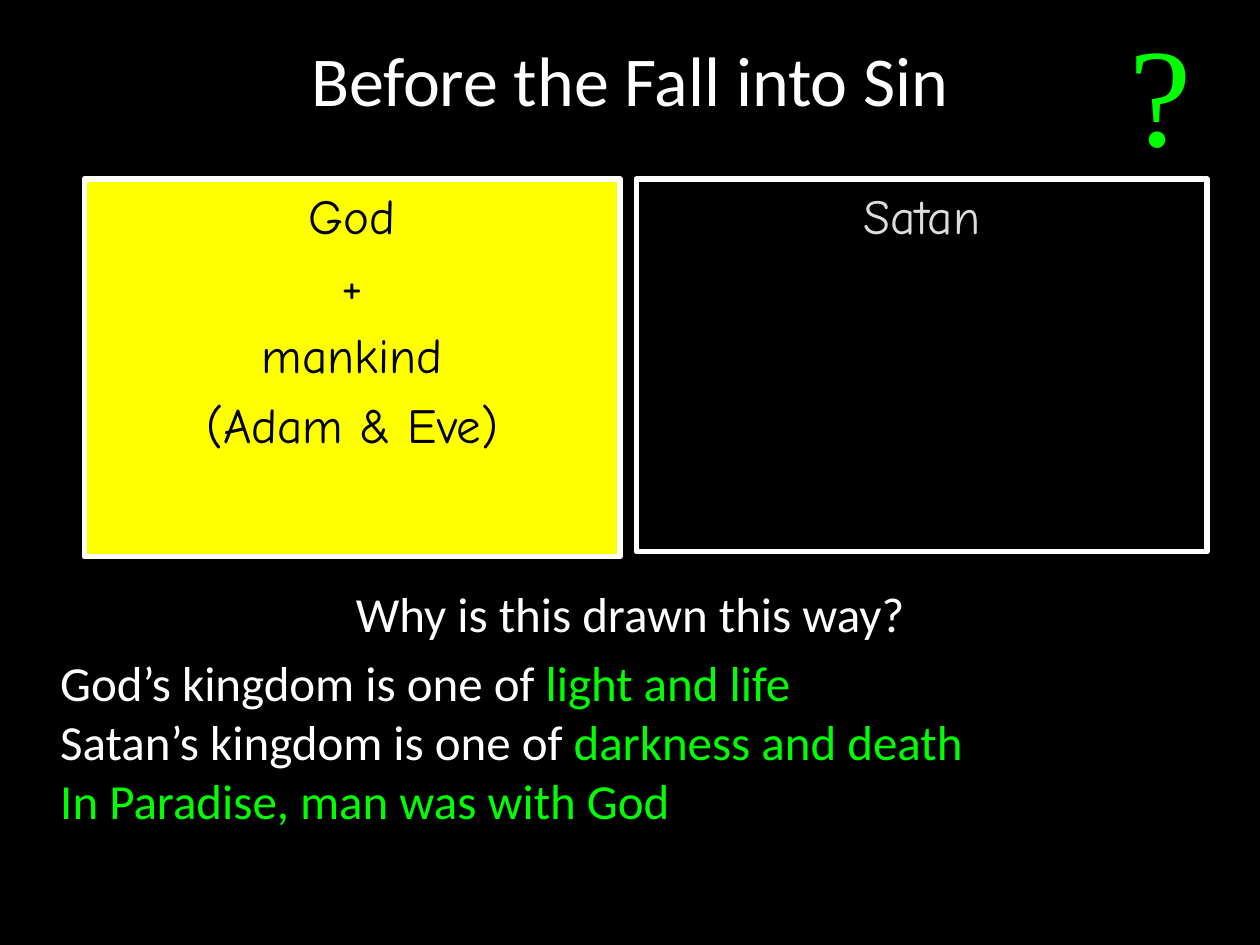
from pptx import Presentation
from pptx.dml.color import RGBColor
from pptx.enum.shapes import MSO_SHAPE
from pptx.enum.text import MSO_ANCHOR, PP_ALIGN
from pptx.util import Inches, Pt

BLACK = RGBColor(0x00, 0x00, 0x00)
WHITE = RGBColor(0xFF, 0xFF, 0xFF)
YELLOW = RGBColor(0xFF, 0xFF, 0x00)
GREEN = RGBColor(0x00, 0xFF, 0x00)
GREY = RGBColor(0xDD, 0xDD, 0xDD)

BODY_SIZE = 28
SPACE_BEFORE = Pt(6.2)


def add_run(paragraph, text, color, size=BODY_SIZE, font="Calibri"):
    run = paragraph.add_run()
    run.text = text
    run.font.name = font
    run.font.size = Pt(size)
    run.font.color.rgb = color


def add_text_box(slide, box):
    frame = slide.shapes.add_textbox(*map(Inches, box)).text_frame
    frame.word_wrap = True
    return frame


def place_title(slide, box, text):
    title = slide.shapes.title
    title.left, title.top, title.width, title.height = map(Inches, box)
    title.text_frame.vertical_anchor = MSO_ANCHOR.MIDDLE
    heading = title.text_frame.paragraphs[0]
    heading.alignment = PP_ALIGN.CENTER
    add_run(heading, text, WHITE, 40)


def add_kingdom(slide, box, fill, color, members):
    kingdom = slide.shapes.add_shape(MSO_SHAPE.RECTANGLE, *map(Inches, box))
    kingdom.shadow.inherit = False
    kingdom.fill.solid()
    kingdom.fill.fore_color.rgb = fill
    kingdom.line.color.rgb = WHITE
    kingdom.line.width = Pt(3)
    frame = kingdom.text_frame
    frame.word_wrap = True
    frame.vertical_anchor = MSO_ANCHOR.TOP
    for index, member in enumerate(members):
        paragraph = frame.add_paragraph() if index else frame.paragraphs[0]
        paragraph.alignment = PP_ALIGN.CENTER
        paragraph.space_before = SPACE_BEFORE
        add_run(paragraph, member, color, font="Comic Neue")


def add_explanation(slide, box, question, answers):
    frame = add_text_box(slide, box)
    prompt = frame.paragraphs[0]
    prompt.alignment = PP_ALIGN.CENTER
    prompt.space_before = SPACE_BEFORE
    add_run(prompt, question, WHITE)

    reply = frame.add_paragraph()
    reply.space_before = SPACE_BEFORE
    reply_properties = reply._p.get_or_add_pPr()
    reply_properties.set("marL", str(Inches(0.38)))
    reply_properties.set("indent", "0")
    for index, answer in enumerate(answers):
        if index:
            reply.add_line_break()
        for text, color in answer:
            add_run(reply, text, color)


def add_question_mark(slide, box):
    frame = add_text_box(slide, box)
    frame.vertical_anchor = MSO_ANCHOR.MIDDLE
    mark = frame.paragraphs[0]
    mark.alignment = PP_ALIGN.CENTER
    add_run(mark, "?", GREEN, 80, "Times New Roman")


def main():
    deck = Presentation()
    deck.slide_width, deck.slide_height = Inches(10), Inches(7.5)
    slide = deck.slides.add_slide(deck.slide_layouts[5])
    slide.background.fill.solid()
    slide.background.fill.fore_color.rgb = BLACK

    place_title(slide, (0, 0, 10, 1.25), "Before the Fall into Sin")
    add_explanation(slide, (0, 4.58, 10, 2.92), "Why is this drawn this way?", [
        [("God’s kingdom is one of ", WHITE), ("light and life", GREEN)],
        [("Satan’s kingdom is one of ", WHITE), ("darkness and death", GREEN)],
        [("In Paradise, man was with God", GREEN)],
    ])
    add_kingdom(slide, (0.67, 1.42, 4.25, 3), YELLOW, BLACK,
                ["God", "+", "mankind", "(Adam & Eve)"])
    add_kingdom(slide, (5.05, 1.42, 4.53, 2.96), BLACK, GREY, ["Satan"])
    add_question_mark(slide, (8.42, 0, 1.58, 1.43))
    deck.save("out.pptx")


if __name__ == "__main__":
    main()
